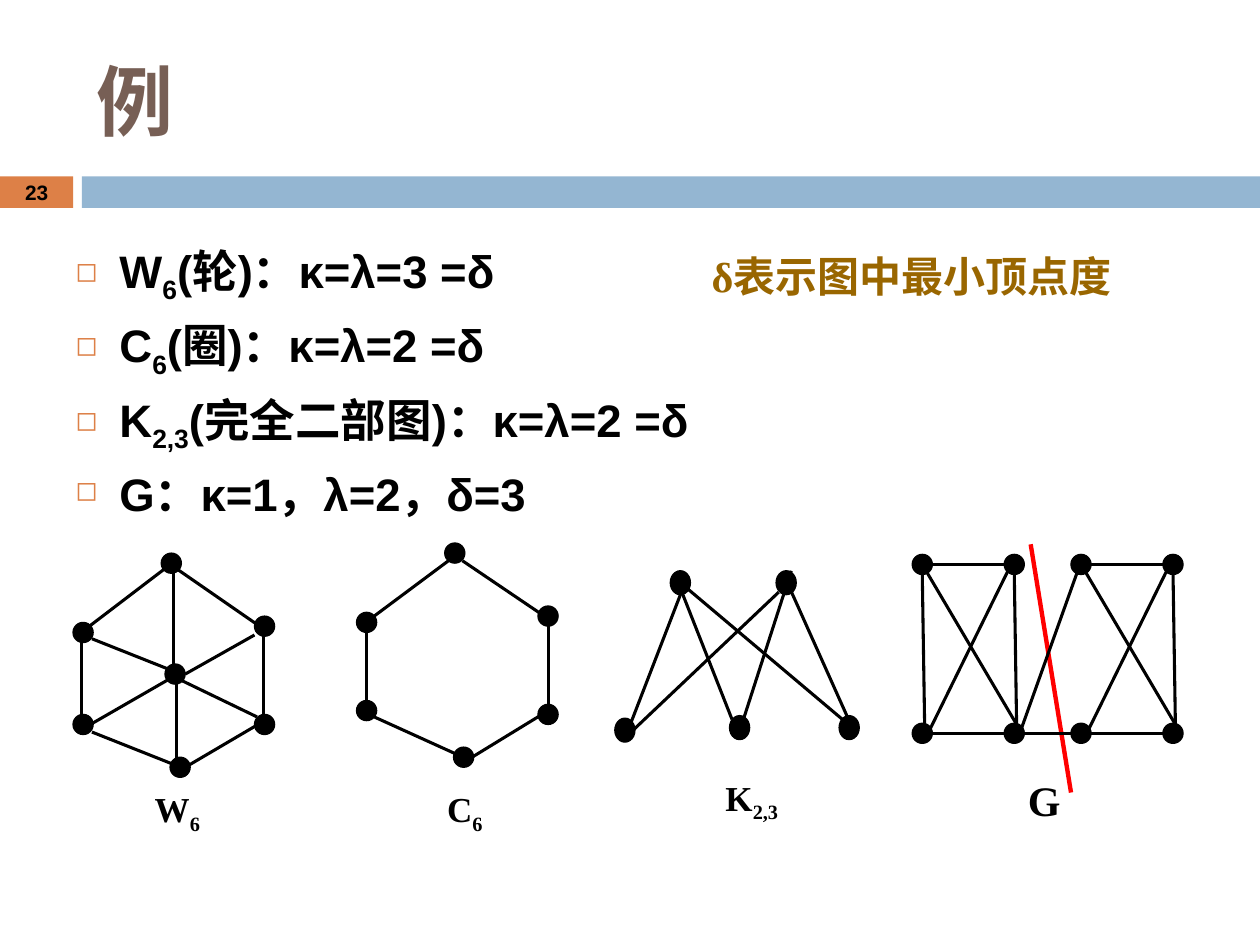
from lxml import etree
from pptx import Presentation
from pptx.dml.color import RGBColor
from pptx.enum.shapes import MSO_CONNECTOR, MSO_SHAPE
from pptx.enum.text import MSO_ANCHOR, PP_ALIGN
from pptx.oxml.ns import qn
from pptx.util import Inches, Pt

RECTANGLE, VERTEX = MSO_SHAPE.RECTANGLE, MSO_SHAPE.FLOWCHART_CONNECTOR
STRAIGHT = MSO_CONNECTOR.STRAIGHT
TOP, MIDDLE = MSO_ANCHOR.TOP, MSO_ANCHOR.MIDDLE
LEFT, CENTER, JUSTIFY = PP_ALIGN.LEFT, PP_ALIGN.CENTER, PP_ALIGN.JUSTIFY
SANS, SERIF = "Arial", "Times New Roman"
BLACK, BROWN, ORANGE, BLUE = "000000", "775F55", "DD8047", "94B6D2"
GOLD, RED = "996600", "FF0000"

WIDTH, HEIGHT = 10, 7.5
BAND_TOP, BAND_HEIGHT, NUMBER_WIDTH, BAND_LEFT = 1.4, 0.25, 0.58, 0.65
INDENT = 0.35
HALF_SHIFT = 1.26

# Each run is (text, is subscript).
EXAMPLES = [
    [("W", False), ("6", True), ("(轮)：κ=λ=3 =δ", False)],
    [("C", False), ("6", True), ("(圈)：κ=λ=2 =δ", False)],
    [("K", False), ("2,3", True), ("(完全二部图)：κ=λ=2 =δ", False)],
    [("G：κ=1，λ=2，δ=3", False)],
]

HALF_VERTICES = [(7.24, 4.4), (7.97, 4.4), (7.24, 5.74), (7.97, 5.74)]
HALF_EDGES = [
    (7.4, 4.48, 8.03, 4.48), (7.4, 5.82, 8.03, 5.82), (8.07, 5.84, 8.05, 4.56),
    (7.38, 5.79, 8, 4.53), (8.11, 5.82, 7.32, 4.48),
]
SHIFTS = (0, HALF_SHIFT)

GRAPHS = [
    {
        "label": [("K", False), ("2,3", True)],
        "label_box": (5.66, 6.11, 0.74, 0.61), "label_size": 20,
        "vertex_size": (0.16, 0.19),
        "vertices": [(5.32, 4.53), (6.16, 4.53), (4.88, 5.7), (5.79, 5.68), (6.66, 5.68)],
        "edges": [
            (5.43, 4.65, 6.77, 5.78), (5.4, 4.67, 5.81, 5.71), (5.4, 4.72, 5.01, 5.73),
            (6.26, 4.65, 6.73, 5.7), (5.9, 5.71, 6.28, 4.53), (6.18, 4.7, 5.03, 5.79),
        ],
        "cuts": [],
    },
    {
        "label": [("G", False)],
        "label_box": (8.06, 6.1, 0.79, 0.55), "label_size": 24,
        "vertex_size": (0.16, 0.16),
        "vertices": [(x + shift, y) for shift in SHIFTS for x, y in HALF_VERTICES],
        "edges": [(x1 + shift, y1, x2 + shift, y2)
                  for shift in SHIFTS for x1, y1, x2, y2 in HALF_EDGES]
        + [(7.34, 5.84, 7.32, 4.56), (8.66, 5.82, 8.11, 5.82), (8.1, 5.8, 8.55, 4.54),
           (9.33, 5.84, 9.31, 4.56)][:3],
        "cuts": [(8.18, 4.32, 8.5, 6.29)],
    },
    {
        "label": [("C", False), ("6", True)],
        "label_box": (3.45, 6.2, 0.74, 0.61), "label_size": 20,
        "vertex_size": (0.16, 0.16),
        "vertices": [(3.53, 4.31), (2.83, 4.86), (2.83, 5.56), (3.6, 5.93),
                     (4.27, 5.59), (4.27, 4.81)],
        "edges": [
            (2.97, 4.89, 3.56, 4.45), (2.91, 4.93, 2.91, 5.56), (2.97, 5.69, 3.61, 5.98),
            (3.73, 6.02, 4.4, 5.61), (4.35, 4.96, 4.35, 5.59), (3.67, 4.45, 4.32, 4.89),
        ],
        "cuts": [],
    },
    {
        "label": [("W", False), ("6", True)],
        "label_box": (1.13, 6.2, 0.74, 0.61), "label_size": 20,
        "vertex_size": (0.16, 0.16),
        "vertices": [(1.28, 4.39), (0.58, 4.94), (0.58, 5.67), (1.35, 6.01),
                     (2.02, 5.67), (2.02, 4.89), (1.31, 5.27)],
        "edges": [
            (0.71, 4.97, 1.3, 4.52), (0.65, 5.04, 0.65, 5.67), (0.73, 5.81, 1.36, 6.06),
            (1.47, 6.09, 2.15, 5.69), (2.09, 5.03, 2.09, 5.67), (1.41, 4.52, 2.06, 4.97),
            (1.38, 4.55, 1.38, 5.4), (0.73, 5.07, 1.36, 5.32), (0.7, 5.76, 1.36, 5.38),
            (1.4, 5.41, 1.4, 6.03), (1.44, 5.4, 2.04, 5.69), (1.47, 5.35, 2.02, 5.04),
        ],
        "cuts": [],
    },
]


def color(value):
    return RGBColor.from_string(value)


def add_shape(shapes, kind, at, fill, outline=None):
    shape = shapes.add_shape(kind, *map(Inches, at))
    shape.shadow.inherit = False
    shape.fill.solid()
    shape.fill.fore_color.rgb = color(fill)
    if outline:
        shape.line.color.rgb = color(outline)
        shape.line.width = Pt(0.75)
    else:
        shape.line.fill.background()


def add_line(shapes, ends, stroke, width):
    line = shapes.add_connector(STRAIGHT, *map(Inches, ends))
    line.line.color.rgb = color(stroke)
    line.line.width = Pt(width)
    etree.SubElement(line.element.spPr, qn("a:effectLst"))


def add_text(shapes, at, paragraphs, size, font, ink, align=LEFT, anchor=TOP):
    box = shapes.add_textbox(*map(Inches, at))
    frame = box.text_frame
    frame.word_wrap = True
    frame.vertical_anchor = anchor
    for index, runs in enumerate(paragraphs):
        para = frame.add_paragraph() if index else frame.paragraphs[0]
        para.alignment = align
        for text, subscript in runs:
            span = para.add_run()
            span.text = text
            span.font.size = Pt(size)
            span.font.name = font
            span.font.bold = True
            span.font.color.rgb = color(ink)
            if subscript:
                span.font._element.set("baseline", "-25000")
    return frame


def add_bullet(para):
    para.space_before = Pt(7)
    properties = para._p.get_or_add_pPr()
    properties.set("marL", str(Inches(INDENT)))
    properties.set("indent", str(-Inches(INDENT)))
    tint = etree.SubElement(properties, qn("a:buClr"))
    etree.SubElement(tint, qn("a:srgbClr"), val=ORANGE)
    etree.SubElement(properties, qn("a:buSzPct"), val="60000")
    etree.SubElement(properties, qn("a:buChar"), char="◻")


def add_graph(page, graph):
    shapes = page.shapes.add_group_shape().shapes
    for ends in graph["cuts"]:
        add_line(shapes, ends, RED, 2.5)
    for ends in graph["edges"]:
        add_line(shapes, ends, BLACK, 1.75)
    for corner in graph["vertices"]:
        add_shape(shapes, VERTEX, corner + graph["vertex_size"], BLACK, BLACK)
    add_text(shapes, graph["label_box"], [graph["label"]], graph["label_size"],
             SERIF, BLACK, JUSTIFY)


def main():
    deck = Presentation()
    deck.slide_width, deck.slide_height = Inches(WIDTH), Inches(HEIGHT)
    page = deck.slides.add_slide(deck.slide_layouts[6])
    shapes = page.shapes
    number_at = (0, BAND_TOP, NUMBER_WIDTH, BAND_HEIGHT)
    add_shape(shapes, RECTANGLE, number_at, ORANGE)
    add_shape(shapes, RECTANGLE, (BAND_LEFT, BAND_TOP, WIDTH - BAND_LEFT, BAND_HEIGHT), BLUE)
    add_text(shapes, (0.67, 0.25, 8.92, 1.08), [[("例", False)]], 44, SANS, BROWN, anchor=MIDDLE)
    examples = add_text(shapes, (0.5, 1.88, 9, 2.18), EXAMPLES, 26, SANS, BLACK)
    for para in examples.paragraphs:
        add_bullet(para)
    add_text(shapes, number_at, [[("23", False)]], 11.9, SANS, BLACK, CENTER, MIDDLE)
    add_text(shapes, (5.55, 1.94, 3.47, 0.5), [[("δ表示图中最小顶点度", False)]], 24, SERIF, GOLD)
    for graph in GRAPHS:
        add_graph(page, graph)
    deck.save("out.pptx")


if __name__ == "__main__":
    main()
